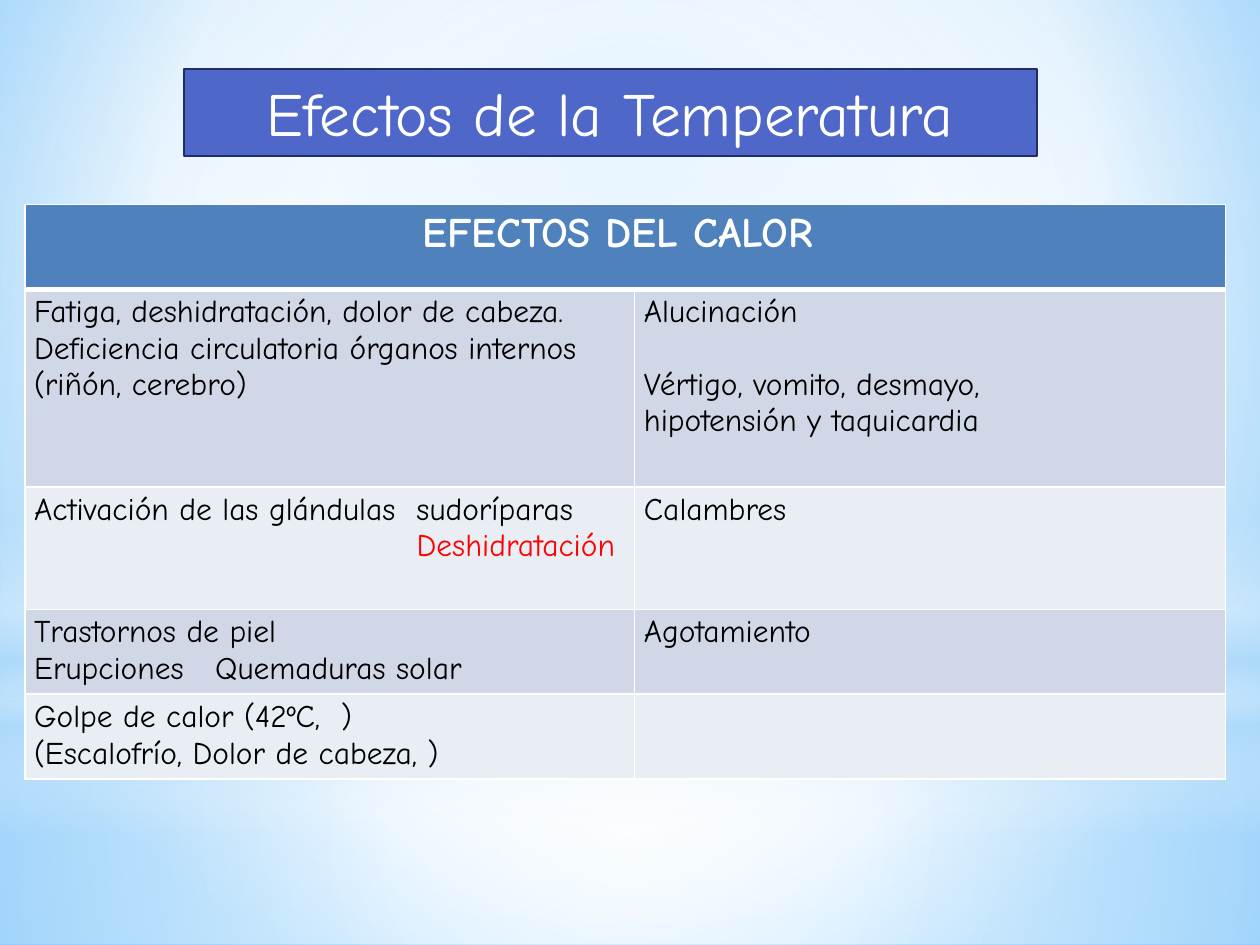
from lxml.etree import SubElement
from pptx import Presentation
from pptx.dml.color import RGBColor
from pptx.enum.shapes import MSO_SHAPE
from pptx.enum.text import MSO_ANCHOR, PP_ALIGN
from pptx.oxml import parse_xml
from pptx.oxml.ns import nsdecls, qn
from pptx.util import Pt

# Content
FONT = "Comic Neue"
TITLE = "Efectos de la Temperatura"
HEADER = "EFECTOS DEL CALOR "
ROWS = [
    (["Fatiga, deshidratación, dolor de cabeza.",
      "Deficiencia circulatoria órganos internos",
      "(riñón, cerebro)"],
     ["Alucinación", "Vértigo, vomito, desmayo,", "hipotensión y taquicardia"]),
    (["Activación de las glándulas  sudoríparas", "Deshidratación "],
     ["Calambres"]),
    (["Trastornos de piel", "Erupciones   Quemaduras solar"],
     ["Agotamiento"]),
    (["Golpe de calor (42ºC,  )", "(Escalofrío, Dolor de cabeza, )"],
     []),
]
COLORS = {
    "white": "FFFFFF", "black": "000000", "warning": "FF0000",
    "title": "4E67C8", "title line": "1F2E69", "header": "4F81BD",
    "odd row": "D0D8E8", "even row": "E9EDF4",
    "sky": "9ED5FF", "deep sky": "5BB9FF", "haze": "B4DCFA",
}
COLUMN_WIDTHS = [348.5, 337.5]
ROW_HEIGHTS = [48.5, 113, 70, 48.5, 48.5]
CENTER = (50, 50, 50, 50)

# Gradient stops: position, colour, opacity (percent)
BACKGROUND = [(0, "sky", 100), (60, "white", 100), (100, "deep sky", 100)]
GLOWS = [  # preset, top, height, stops, focus (None means top to bottom)
    (MSO_SHAPE.RECTANGLE, 402, 138,
     [(0, "white", 91), (37, "white", 76), (100, "haze", 79)], CENTER),
    (MSO_SHAPE.RECTANGLE, 0, 402,
     [(0, "white", 89), (48, "white", 62), (100, "haze", 79)], CENTER),
    (MSO_SHAPE.RECTANGLE, 297, 180,
     [(0, "white", 0), (29, "white", 30), (45, "haze", 40),
      (55, "white", 26), (65, "haze", 60), (100, "white", 0)], None),
    (MSO_SHAPE.OVAL, 126, 402, [(0, "white", 100), (56, "white", 0)], CENTER),
]


def color(name):
    return RGBColor.from_string(COLORS[name])


def set_gradient(fill, properties, stops, focus):
    """Replace a solid fill with a gradient, keeping its place in the XML."""
    fill.solid()
    stop_xml = "".join(
        f'<a:gs pos="{position * 1000}"><a:srgbClr val="{COLORS[name]}">'
        f'<a:alpha val="{opacity * 1000}"/></a:srgbClr></a:gs>'
        for position, name, opacity in stops)
    if focus:
        left, top, right, bottom = (side * 1000 for side in focus)
        direction = (f'<a:path path="circle"><a:fillToRect l="{left}" t="{top}" '
                     f'r="{right}" b="{bottom}"/></a:path>')
    else:
        direction = '<a:lin ang="5400000" scaled="0"/>'
    solid = properties.find(qn("a:solidFill"))
    properties.replace(solid, parse_xml(
        f'<a:gradFill {nsdecls("a")} rotWithShape="1">'
        f'<a:gsLst>{stop_xml}</a:gsLst>{direction}</a:gradFill>'))


def format_text(paragraph, size, color_name, bold=False):
    paragraph.font.size = Pt(size)
    for run in paragraph.runs:
        run.font.name = FONT
        run.font.size = Pt(size)
        run.font.bold = bold
        run.font.color.rgb = color(color_name)


def style_cell(cell, fill_name, top=1, bottom=1):
    cell.margin_left = cell.margin_right = Pt(5.3)
    cell.margin_top = cell.margin_bottom = Pt(2.9)
    properties = cell._tc.get_or_add_tcPr()
    for side, width in (("L", 1), ("R", 1), ("T", top), ("B", bottom)):
        line = SubElement(properties, qn(f"a:ln{side}"), w=str(Pt(width)))
        solid = SubElement(line, qn("a:solidFill"))
        SubElement(solid, qn("a:srgbClr"), val=COLORS["white"])
    cell.fill.solid()
    cell.fill.fore_color.rgb = color(fill_name)


presentation = Presentation()
presentation.slide_width, presentation.slide_height = Pt(720), Pt(540)
slide = presentation.slides.add_slide(presentation.slide_layouts[5])

# Background and soft glows
fill = slide.background.fill
fill.solid()
set_gradient(fill, slide._element.cSld.bg.bgPr, BACKGROUND, (20, 10, 20, 60))
for preset, top, height, stops, focus in GLOWS:
    glow = slide.shapes.add_shape(preset, 0, Pt(top), Pt(720), Pt(height))
    glow.shadow.inherit = False
    glow.line.fill.background()
    set_gradient(glow.fill, glow._element.spPr, stops, focus)

# Title, brought in front of the glows
title = slide.shapes.title
slide.shapes._spTree.append(title._element)
title.left, title.top, title.width, title.height = Pt(105), Pt(39.5), Pt(487.5), Pt(49.7)
title.fill.solid()
title.fill.fore_color.rgb = color("title")
title.line.color.rgb = color("title line")
title.line.width = Pt(1.25)
title.text_frame.text = TITLE
title.text_frame.word_wrap = True
title.text_frame.vertical_anchor = MSO_ANCHOR.TOP
title.text_frame.paragraphs[0].alignment = PP_ALIGN.CENTER
format_text(title.text_frame.paragraphs[0], 35, "white")

# Table
table = slide.shapes.add_table(
    len(ROW_HEIGHTS), len(COLUMN_WIDTHS), Pt(14.2), Pt(116.8),
    Pt(sum(COLUMN_WIDTHS)), Pt(sum(ROW_HEIGHTS))).table
for column, width in zip(table.columns, COLUMN_WIDTHS):
    column.width = Pt(width)
for row, height in zip(table.rows, ROW_HEIGHTS):
    row.height = Pt(height)

# Header row
header = table.cell(0, 0)
header.merge(table.cell(0, 1))
for cell in table.rows[0].cells:
    style_cell(cell, "header", bottom=3)
header.text_frame.text = HEADER
header.text_frame.paragraphs[0].alignment = PP_ALIGN.CENTER
format_text(header.text_frame.paragraphs[0], 24, "white", bold=True)

# Effect rows
for row_index, row in enumerate(ROWS, start=1):
    for column_index, lines in enumerate(row):
        cell = table.cell(row_index, column_index)
        style_cell(cell, "odd row" if row_index % 2 else "even row",
                   top=3 if row_index == 1 else 1)
        cell.text_frame.text = "\n".join(lines)
        for paragraph in cell.text_frame.paragraphs:
            format_text(paragraph, 18, "black")

# Gap after the first symptom, and the highlighted consequence
table.cell(1, 1).text_frame.paragraphs[0].space_after = Pt(20.7)
consequence = table.cell(2, 0).text_frame.paragraphs[1]
consequence.alignment = PP_ALIGN.RIGHT
format_text(consequence, 18, "warning")

presentation.save("out.pptx")
